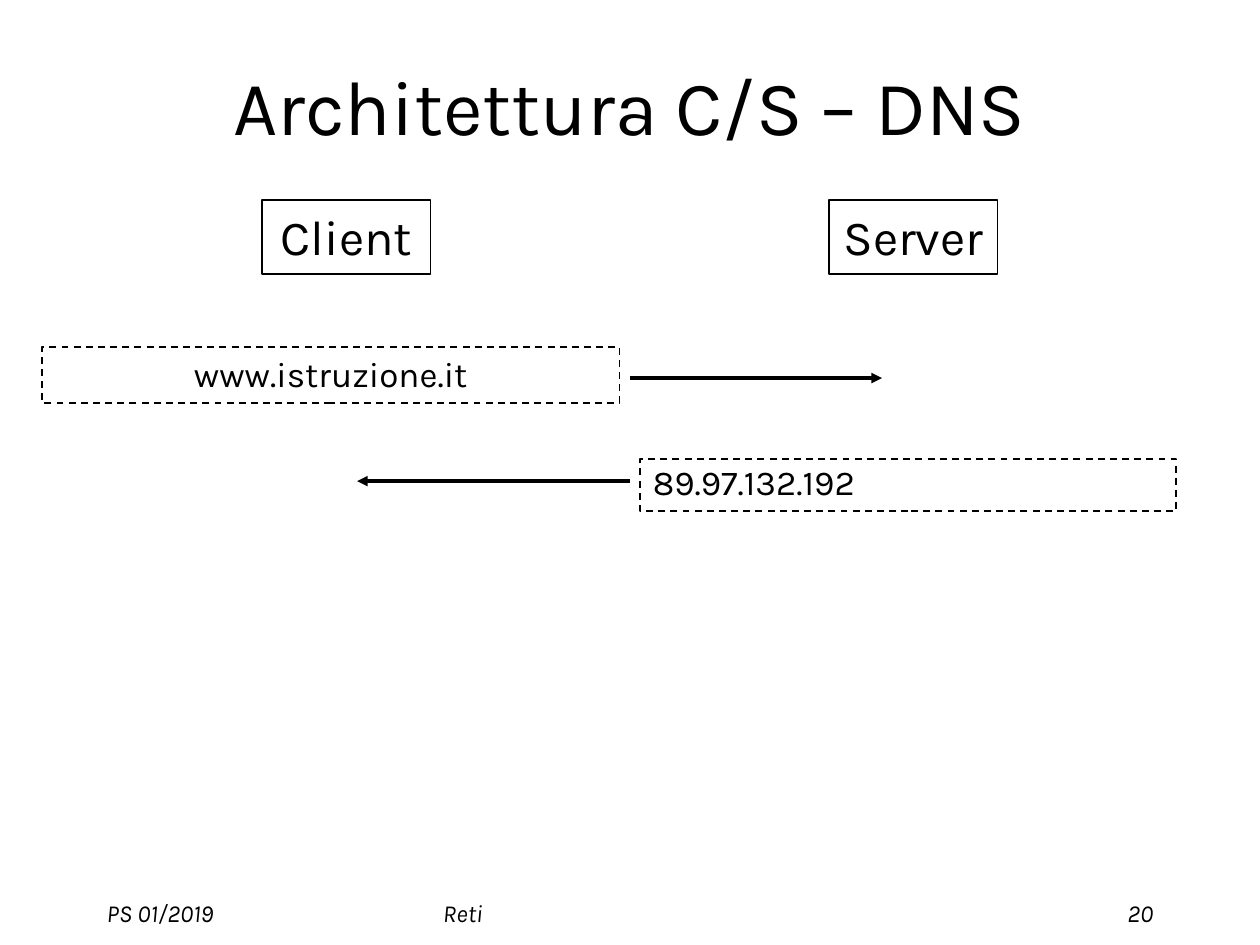
"""Build a slide that shows a DNS exchange between client and server."""
from dataclasses import dataclass

from lxml.etree import SubElement
from pptx import Presentation
from pptx.dml.color import RGBColor
from pptx.enum.dml import MSO_LINE_DASH_STYLE as Dash
from pptx.enum.shapes import MSO_CONNECTOR as Connector
from pptx.enum.shapes import MSO_SHAPE as Shape
from pptx.enum.text import MSO_ANCHOR as Anchor
from pptx.enum.text import PP_ALIGN as Align
from pptx.oxml.ns import qn
from pptx.util import Cm, Pt


@dataclass(frozen=True)
class Theme:
    """Hold the colours, font, type sizes and line widths."""
    ink: RGBColor = RGBColor(0, 0, 0)
    paper: RGBColor = RGBColor(255, 255, 255)
    font: str = "Karla"
    title: int = 44
    role: int = 28
    message: int = 20
    footer: int = 14
    border: int = 1
    arrow: int = 2


@dataclass(frozen=True)
class Box:
    """Describe an area in centimetres."""
    left: float
    top: float
    width: float
    height: float

    def inner(self, left, top, width, height):
        """Return an area placed relative to this one."""
        return Box(self.left + left, self.top + top, width, height)

    def lengths(self):
        """Return left, top, width and height as slide lengths."""
        return [Cm(value) for value in (self.left, self.top, self.width, self.height)]


THEME = Theme()


def write(shape, text, size, align=Align.LEFT, anchor=Anchor.TOP, italic=False):
    """Set and format one paragraph of text in a shape."""
    frame = shape.text_frame
    frame.word_wrap = True
    frame.vertical_anchor = anchor
    frame.text = text
    para = frame.paragraphs[0]
    para.alignment = align
    font = para.runs[0].font
    font.name, font.size, font.italic = THEME.font, Pt(size), italic
    font.color.rgb = THEME.ink
    return para


def add_frame(page, box, text, size, align=Align.CENTER, dash=None):
    """Add an outlined rectangle with text and return its paragraph."""
    shape = page.shapes.add_shape(Shape.RECTANGLE, *box.lengths())
    shape.shadow.inherit = False
    shape.fill.background()
    shape.line.color.rgb = THEME.ink
    shape.line.width = Pt(THEME.border)
    shape.line.dash_style = dash
    return write(shape, text, size, align)


def add_arrow(page, start, end, height):
    """Add a level arrow from start to end."""
    arrow = page.shapes.add_connector(
        Connector.STRAIGHT, Cm(start), Cm(height), Cm(end), Cm(height))
    arrow.line.color.rgb = THEME.ink
    arrow.line.width = Pt(THEME.arrow)
    properties = arrow._element.spPr
    SubElement(properties.find(qn("a:ln")), qn("a:tailEnd"), type="triangle")
    SubElement(properties, qn("a:effectLst"))


def add_title(page, box):
    """Place the slide title."""
    shape = page.shapes.add_textbox(*box.lengths())
    write(shape, "Architettura C/S – DNS", THEME.title, Align.CENTER, Anchor.MIDDLE)


def add_roles(page, box):
    """Place the two roles at the ends of the box."""
    width = 3.39
    for text, left in (("Client", 0), ("Server", box.width - width)):
        add_frame(page, box.inner(left, 0, width, box.height), text, THEME.role)


def add_exchange(page, box):
    """Place the request and the reply with their arrows."""
    middle = box.left + 11.85
    add_frame(page, box.inner(0, 0, 11.64, 1.14), "www.istruzione.it",
              THEME.message, dash=Dash.DASH)
    add_arrow(page, middle, middle + 5.08, box.top + 0.63)
    add_arrow(page, middle, middle - 5.5, box.top + 2.71)
    reply = add_frame(page, box.inner(12.06, 2.26, box.width - 12.06, 1.06),
                      "89.97.132.192", THEME.message, Align.LEFT, Dash.DASH)
    reply.line_spacing = 0.9


def add_footer(page, box):
    """Place the date, the subject and the page number."""
    side, centre = 5.29, 8.04
    fields = (
        ("PS 01/2019", 0, side, Align.LEFT),
        ("Reti", (box.width - centre) / 2, centre, Align.LEFT),
        ("20", box.width - side, side, Align.RIGHT),
    )
    for text, left, width, align in fields:
        area = box.inner(left, 0, width, box.height)
        shape = page.shapes.add_textbox(*area.lengths())
        write(shape, text, THEME.footer, align, italic=True)


def main():
    """Build and save the deck."""
    deck = Presentation()
    deck.slide_width, deck.slide_height = Cm(25.4), Cm(19.05)
    page = deck.slides.add_slide(deck.slide_layouts[6])
    page.background.fill.solid()
    page.background.fill.fore_color.rgb = THEME.paper
    add_title(page, Box(1.9, 0.85, 21.6, 2.54))
    add_roles(page, Box(5.29, 4.04, 14.82, 1.48))
    add_exchange(page, Box(0.85, 6.99, 22.86, 3.32))
    add_footer(page, Box(1.9, 17.98, 21.6, 0.64))
    deck.save("out.pptx")


if __name__ == "__main__":
    main()
